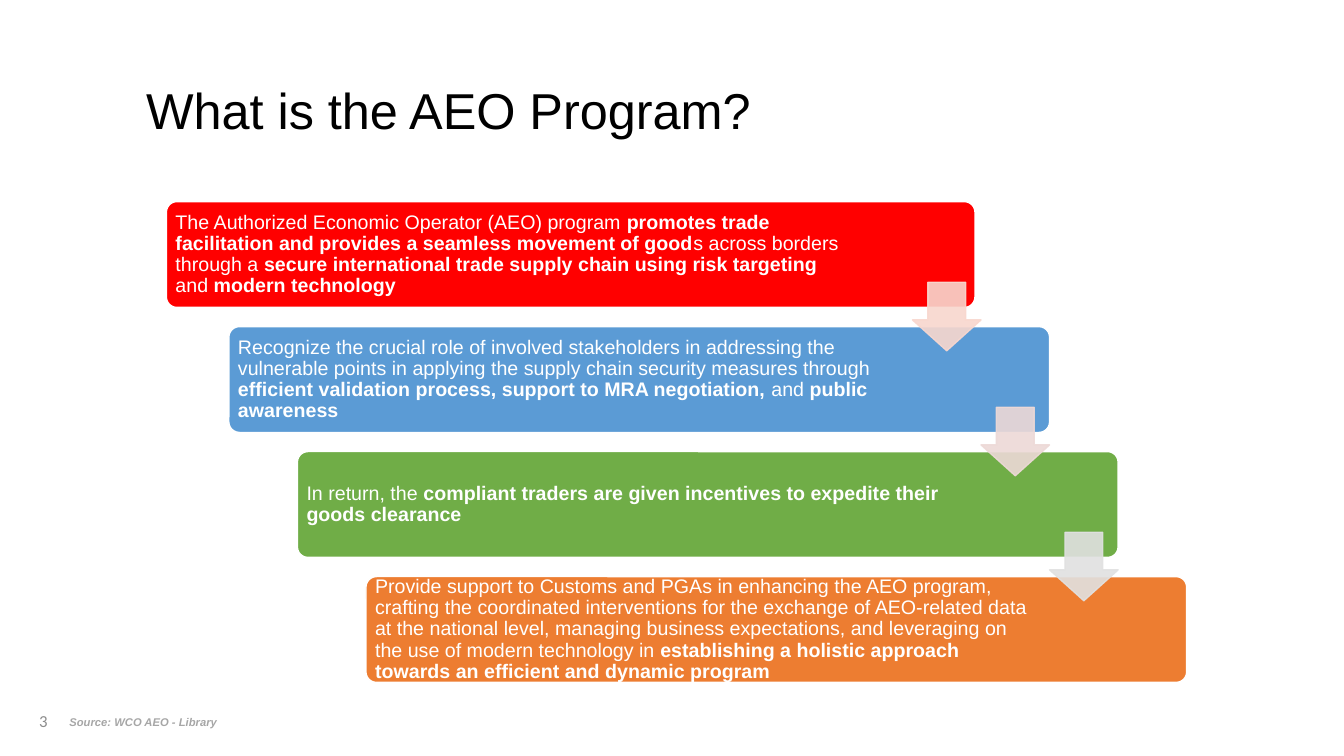
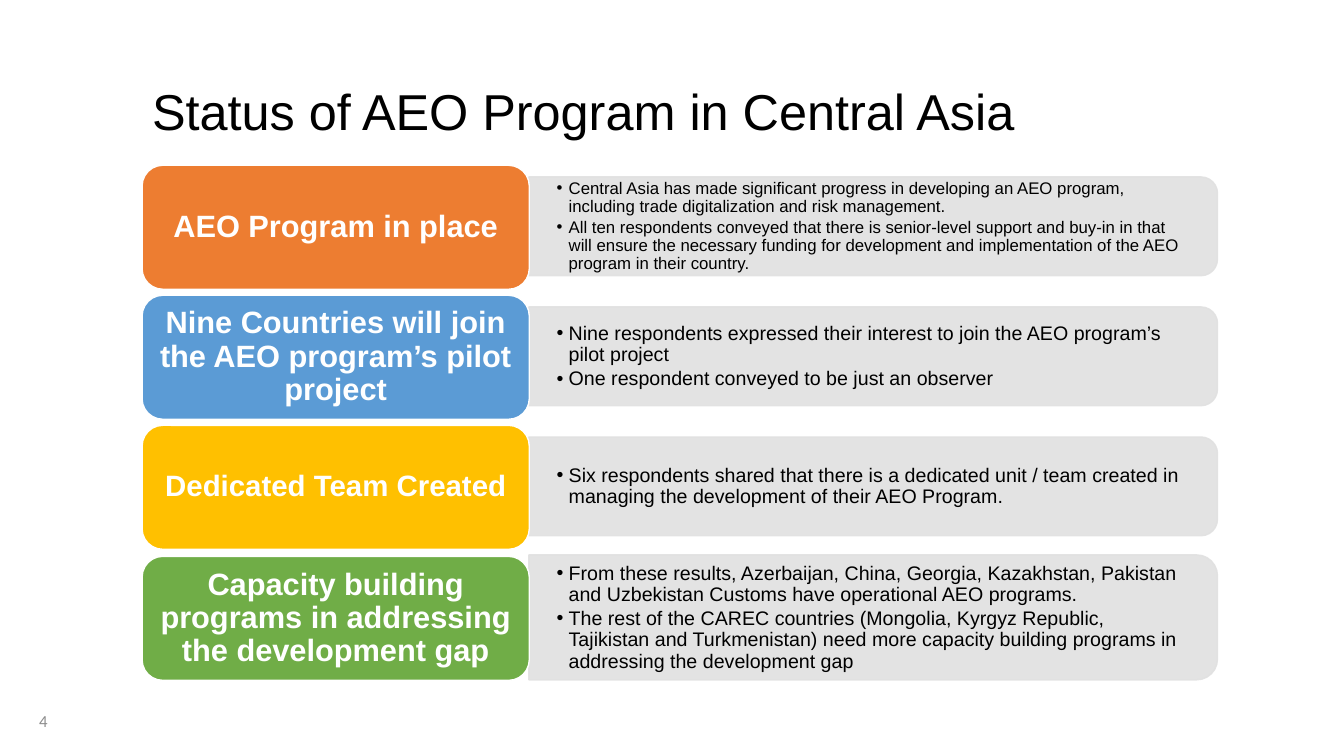
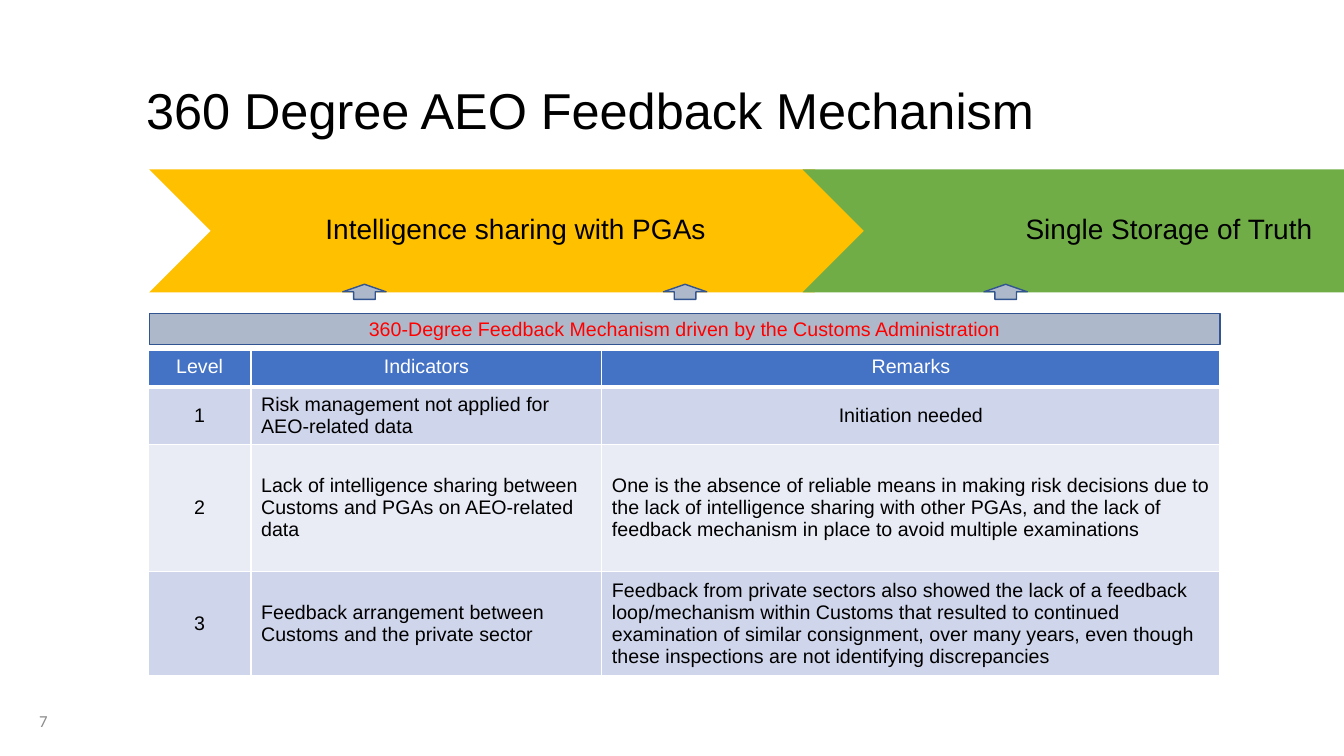
from lxml.etree import SubElement as Sub
from pptx import Presentation
from pptx.dml.color import RGBColor
from pptx.enum.shapes import MSO_SHAPE as Kind
from pptx.enum.text import MSO_ANCHOR as Anchor, PP_ALIGN as Align
from pptx.oxml.ns import qn
from pptx.util import Emu, Pt

WHITE, BLACK, GREY = "FFFFFF", "000000", "E1E1E1"
RED, BLUE, GREEN = "FF0000", "5B9BD5", "70AD47"
ORANGE, GOLD = "ED7D31", "FFC000"
STEEL, NAVY = "ADB9CA", "325491"
HEAD, BANDS = "4472C4", ("CFD5EA", "E9EBF5")


def px(n):
    return Emu(n * 9144)


def hue(code):
    return RGBColor.from_string(code)


class Deck:
    font = "Arial"

    def __init__(self):
        self.prs = Presentation()
        self.prs.slide_width, self.prs.slide_height = px(1333), px(750)

    def page(self, title, num, x, y=40):
        self.slide = self.prs.slides.add_slide(self.prs.slide_layouts[6])
        self.text((x, y, 1028, 145), [title], 36, space=0.9)
        self.text((0, 695, 57, 40), [num], 12, "8C8C8C",
                  align=Align.RIGHT, font="Calibri")

    def put(self, frame, paras, size, color=BLACK, bold=False, slant=False,
            align=Align.LEFT, space=1.0, font=None, bullet=False,
            pad=(10, 5, 10, 5)):
        frame.word_wrap = True
        frame.vertical_anchor = Anchor.MIDDLE
        (frame.margin_left, frame.margin_top,
         frame.margin_right, frame.margin_bottom) = map(px, pad)
        for i, runs in enumerate(paras):
            para = frame.add_paragraph() if i else frame.paragraphs[0]
            if bullet:
                self.dot(para)
                para.space_after = Pt(2)
            para.alignment = align
            para.line_spacing = space
            for j, part in enumerate([runs] if isinstance(runs, str) else runs):
                run = para.add_run()
                run.text = part
                face = run.font
                face.name, face.size = font or self.font, Pt(size)
                face.bold, face.italic = bold or j % 2 == 1, slant
                face.color.rgb = hue(color)

    def dot(self, para):
        props = para._p.get_or_add_pPr()
        props.set("marL", str(px(12)))
        props.set("indent", str(px(-12)))
        Sub(props, qn("a:buFont")).set("typeface", self.font)
        Sub(props, qn("a:buChar")).set("char", "•")

    def text(self, area, paras, size, color=BLACK, **style):
        box = self.slide.shapes.add_textbox(*map(px, area))
        self.put(box.text_frame, paras, size, color, **style)

    def shape(self, kind, area, fill, line=None, adj=(), alpha=None, turn=0):
        item = self.slide.shapes.add_shape(kind, *map(px, area))
        item.shadow.inherit = False
        item.rotation = turn
        for i, val in enumerate(adj):
            item.adjustments[i] = val
        item.fill.solid()
        item.fill.fore_color.rgb = hue(fill)
        if line:
            item.line.color.rgb = hue(line)
            item.line.width = Pt(1)
        else:
            item.line.fill.background()
        if alpha:
            for tone in item.element.spPr.iter(qn("a:srgbClr")):
                Sub(tone, qn("a:alpha")).set("val", str(alpha * 1000))
        return item.text_frame

    def card(self, area, fill, adj=()):
        return self.shape(Kind.ROUNDED_RECTANGLE, area, fill, WHITE, adj)

    def tab(self, x, y, w, h, paras, size):
        area = x + (w - h) // 2, y + (h - w) // 2, h, w
        self.shape(Kind.ROUND_2_SAME_RECTANGLE, area, GREY, GREY,
                   alpha=90, turn=90)
        self.text((x, y, w - 5, h), paras, size, space=0.9,
                  bullet=True, pad=(27, 5, 27, 5))

    def edge(self, cell, side, width):
        line = Sub(cell._tc.get_or_add_tcPr(), qn("a:ln" + side))
        line.set("w", str(Pt(width)))
        Sub(Sub(line, qn("a:solidFill")), qn("a:srgbClr")).set("val", WHITE)

    def table(self, x, y, cols, rows, data):
        grid = self.slide.shapes.add_table(
            len(rows), len(cols), px(x), px(y),
            px(sum(cols)), px(sum(rows))).table
        grid.horz_banding = False
        for i, w in enumerate(cols):
            grid.columns[i].width = px(w)
        for r, h in enumerate(rows):
            grid.rows[r].height = px(h)
            for c, words in enumerate(data[r]):
                cell = grid.cell(r, c)
                for side in "LRTB":
                    self.edge(cell, side, 3 if r == 0 and side == "B" else 1)
                cell.fill.solid()
                cell.fill.fore_color.rgb = hue(BANDS[(r - 1) % 2] if r else HEAD)
                mid = r == 0 or c == 0 or (r, c) == (1, 2)
                self.put(cell.text_frame, [words], 14,
                         BLACK if r else WHITE,
                         align=Align.CENTER if mid else Align.LEFT)
                cell.vertical_anchor = Anchor.MIDDLE if r else Anchor.TOP


def steps(deck):
    deck.page("What is the AEO Program?", "3", 135)
    deck.text((59, 704, 187, 24), ["Source: WCO AEO - Library"], 8, "A6A6A6",
              bold=True, slant=True)
    cards = [
        (165, 802, 682, RED, (
            "The Authorized Economic Operator (AEO) program ",
            "promotes trade facilitation and provides a seamless movement of good",
            "s across borders through a ",
            "secure international trade supply chain using risk targeting ",
            "and", " modern technology")),
        (227, 814, 672, BLUE, (
            "Recognize the crucial role of involved stakeholders in addressing "
            "the vulnerable points in applying the supply chain security "
            "measures through ",
            "efficient validation process, support to MRA negotiation, ",
            "and ", "public awareness")),
        (295, 814, 673, GREEN, (
            "In return, the ",
            "compliant traders are given incentives to expedite their goods "
            "clearance")),
        (363, 814, 672, ORANGE, (
            "Provide support to Customs and PGAs in enhancing the AEO program, "
            "crafting the coordinated interventions for the exchange of "
            "AEO-related data at the national level, managing business "
            "expectations, and leveraging on the use of modern technology in ",
            "establishing a holistic approach towards an efficient and dynamic "
            "program")),
    ]
    for i, (x, w, wrap, fill, runs) in enumerate(cards):
        frame = deck.card((x, 200 + 124 * i, w, 105), fill, [0.1])
        deck.put(frame, [runs], 14, WHITE, space=0.9,
                 pad=(6, 0, w - wrap, 0))
    for i, fill in enumerate(("F8D7CE", "EDD9D7", GREY)):
        deck.shape(Kind.DOWN_ARROW, (905 + 68 * i, 280 + 124 * i, 68, 68),
                   fill, fill, [0.55, 0.45], alpha=90)


def status(deck):
    deck.page("Status of AEO Program in Central Asia", "4", 141, 41)
    rows = [
        ("AEO Program in place", 22, ORANGE, 98, 12, [
            "Central Asia has made significant progress in developing an AEO "
            "program, including trade digitalization and risk management.",
            "All ten respondents conveyed that there is senior-level support "
            "and buy-in in that will ensure the necessary funding for "
            "development and implementation of the AEO program in their "
            "country."]),
        ("Nine Countries will join the AEO program’s pilot project", 22, BLUE,
         98, 14, [
             "Nine respondents expressed their interest to join the AEO "
             "program’s pilot project",
             "One respondent conveyed to be just an observer"]),
        ("Dedicated Team Created", 21, GOLD, 98, 14, [
            "Six respondents shared that there is a dedicated unit / team "
            "created in managing the development of their AEO Program."]),
        ("Capacity building programs in addressing the development gap", 22,
         GREEN, 124, 14, [
             "From these results, Azerbaijan, China, Georgia, Kazakhstan, "
             "Pakistan and Uzbekistan Customs have operational AEO programs.",
             "The rest of the CAREC countries (Mongolia, Kyrgyz Republic, "
             "Tajikistan and Turkmenistan) need more capacity building "
             "programs in addressing the development gap"]),
    ]
    for i, (label, big, fill, h, size, paras) in enumerate(rows):
        y = 164 + 388 * i // 3
        deck.tab(525, y + (123 - h) // 2, 683, h, paras, size)
        frame = deck.card((141, y, 384, 123), fill)
        deck.put(frame, [label], big, WHITE, bold=True,
                 align=Align.CENTER, space=0.9, pad=(9, 5, 9, 5))


def loop(deck):
    deck.page("360 Degree AEO Feedback Mechanism", "7", 135)
    deck.table(147, 348, (102, 348, 613), (36, 49, 126, 91), [
        ("Level", "Indicators", "Remarks"),
        ("1", "Risk management not applied for AEO-related data",
         "Initiation needed"),
        ("2", "Lack of intelligence sharing between Customs and PGAs on "
         "AEO-related data",
         "One is the absence of reliable means in making risk decisions due to "
         "the lack of intelligence sharing with other PGAs, and the lack of "
         "feedback mechanism in place to avoid multiple examinations"),
        ("3", "Feedback arrangement between Customs and the private sector",
         "Feedback from private sectors also showed the lack of a feedback "
         "loop/mechanism within Customs that resulted to continued "
         "examination of similar consignment, over many years, even though "
         "these inspections are not identifying discrepancies"),
    ])
    stages = (("Intelligence sharing with PGAs", GOLD),
              ("Single Storage of Truth", GREEN))
    for i, (label, fill) in enumerate(stages):
        frame = deck.shape(Kind.CHEVRON, (148 + 648 * i, 168, 721, 122), fill)
        deck.put(frame, [label], 20, align=Align.CENTER, space=0.9,
                 pad=(9, 3, 3, 3))
    frame = deck.shape(Kind.RECTANGLE, (148, 311, 1062, 31), STEEL, NAVY)
    deck.put(frame, ["360-Degree Feedback Mechanism driven by the Customs "
                     "Administration"], 14, RED, align=Align.CENTER)
    for i in range(3):
        deck.shape(Kind.UP_ARROW, (340 + 318 * i, 282, 43, 15), STEEL, NAVY)


def main():
    deck = Deck()
    steps(deck)
    status(deck)
    loop(deck)
    deck.prs.save("out.pptx")


if __name__ == "__main__":
    main()
